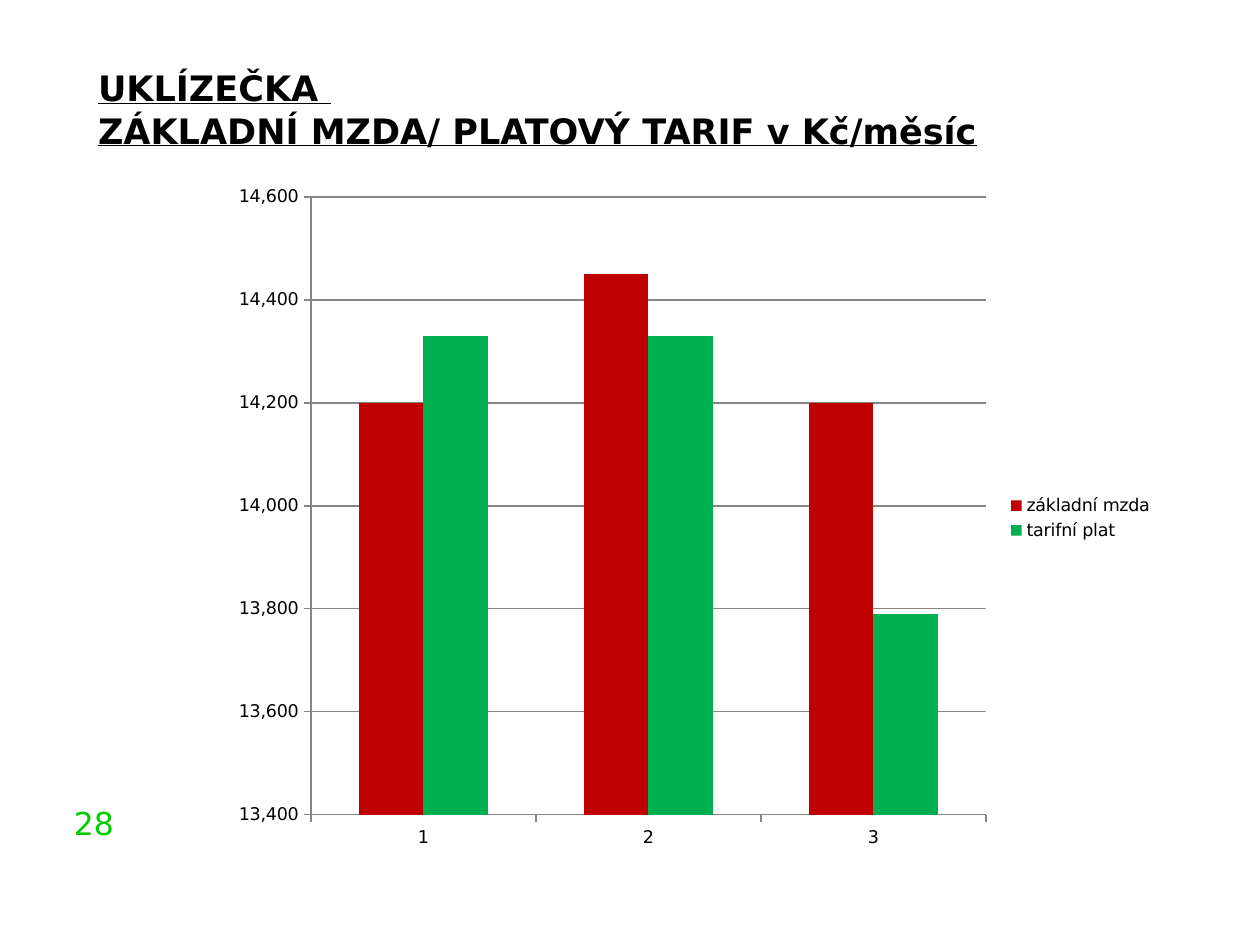
from lxml.etree import SubElement as Sub
from pptx import Presentation
from pptx.chart.data import CategoryChartData as Data
from pptx.dml.color import RGBColor
from pptx.enum.chart import XL_CHART_TYPE as Kind, XL_LEGEND_POSITION as Side
from pptx.enum.chart import XL_TICK_MARK as Tick
from pptx.enum.text import PP_ALIGN as Align
from pptx.oxml.ns import qn
from pptx.util import Pt

# Content
TITLE = "UKLÍZEČKA \vZÁKLADNÍ MZDA/ PLATOVÝ TARIF v\u00a0Kč/měsíc"
PAGE = "28"
CATS = ["1", "2", "3"]
ROWS = [
    ("základní mzda", (14200, 14450, 14200), "C00000"),
    ("tarifní plat", (14330, 14330, 13790), "00B050"),
]

# Places in px
PX = 914400 // 126
SIZE = (1260, 945)
HEAD = (86, 67, 1080, 126)
NUM = (0, 798, 126, 73)
CHART = (221, 174, 945, 688)
PLOT = (311, 197, 675, 618)
FONT = "DejaVu Sans"
GREY = "868686"


def emu(box):
    return [n * PX for n in box]


def color(code):
    return RGBColor.from_string(code)


def style(font, size, code):
    font.name, font.size = FONT, Pt(size)
    font.color.rgb = color(code)


def add_text(box, text, size, code, top):
    frame = slide.shapes.add_textbox(*emu(box)).text_frame
    frame.word_wrap = True
    frame.margin_left = frame.margin_right = 12 * PX
    frame.margin_top = top * PX
    para = frame.paragraphs[0]
    para.text = text
    style(para.font, size, code)
    return para


def set_line(line, width=0.75):
    line.color.rgb = color(GREY)
    line.width = Pt(width)


def set_plot(chart):
    """Fix the inner plot area as fractions of the chart."""
    area = chart._chartSpace.chart.plotArea
    old = area.find(qn("c:layout"))
    if old is not None:
        area.remove(old)
    lay = Sub(area, qn("c:layout"))
    area.insert(0, lay)
    man = Sub(lay, qn("c:manualLayout"))
    x, y, w, h = CHART
    left, top, wide, high = PLOT
    for tag, val in (
        ("layoutTarget", "inner"), ("xMode", "edge"), ("yMode", "edge"),
        ("x", (left - x) / w), ("y", (top - y) / h),
        ("w", wide / w), ("h", high / h),
    ):
        Sub(man, qn("c:" + tag)).set("val", str(val))


prs = Presentation()
prs.slide_width, prs.slide_height = emu(SIZE)
slide = prs.slides.add_slide(prs.slide_layouts[6])

# Page number and title
add_text(NUM, PAGE, 18, "00CC00", 6).alignment = Align.RIGHT
head = add_text(HEAD, TITLE, 20, "000000", 0)
head.font.bold = head.font.underline = True

# Chart
data = Data(number_format="#,##0")
data.categories = CATS
for name, vals, _ in ROWS:
    data.add_series(name, vals)
chart = slide.shapes.add_chart(Kind.COLUMN_CLUSTERED, *emu(CHART), data).chart
style(chart.font, 10, "000000")
chart.has_title = False
chart.has_legend = True
chart.legend.position = Side.RIGHT
chart.legend.include_in_layout = False
set_plot(chart)

# Columns
plot = chart.plots[0]
plot.gap_width, plot.overlap = 150, 0
plot.vary_by_categories = False
for ser, (_, _, code) in zip(plot.series, ROWS):
    ser.format.fill.solid()
    ser.format.fill.fore_color.rgb = color(code)

# Axes
for axis in (chart.category_axis, chart.value_axis):
    axis.major_tick_mark = Tick.OUTSIDE
    axis.minor_tick_mark = Tick.NONE
    set_line(axis.format.line)
scale = chart.value_axis
scale.minimum_scale, scale.maximum_scale, scale.major_unit = 13400, 14600, 200
scale.has_major_gridlines = True
set_line(scale.major_gridlines.format.line)

prs.save("out.pptx")
